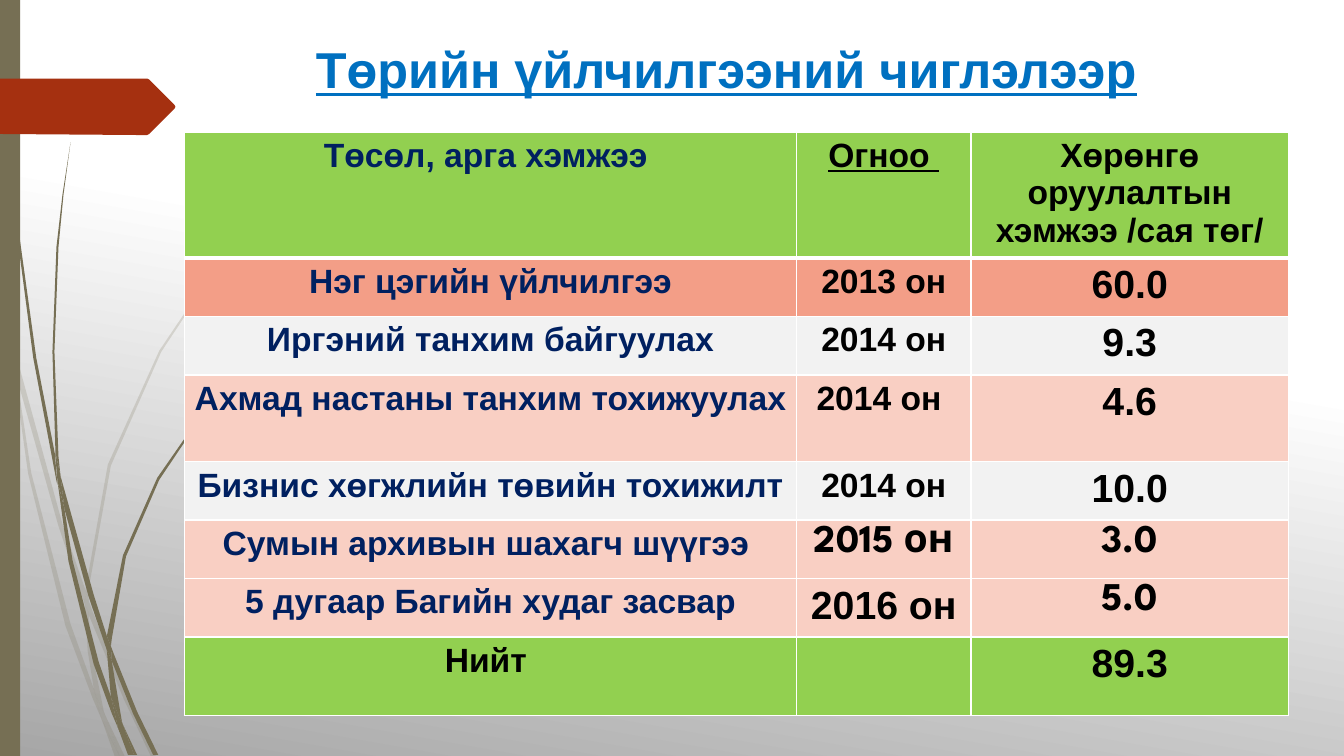
from lxml import etree
from pptx import Presentation, util as u
from pptx.dml.color import RGBColor
from pptx.enum import shapes, text
from pptx.oxml.ns import qn

HUES = {"olive": "766F54", "rust": "A53010", "title": "0070C0", "navy": "002060",
        "black": "000000", "white": "FFFFFF", "grey": "A6A6A6", "green": "92D050",
        "coral": "F39E87", "pale": "F2F2F2", "pink": "F9CFC3"}


def paint(fill, hue):
    fill.solid()
    fill.fore_color.rgb = RGBColor.from_string(HUES[hue])


def draw(parent, spots, hue):
    """Closed outline from (x, y) spots in hundredths of an inch."""
    pen = parent.build_freeform(*spots[0], scale=u.Inches(0.01))
    pen.add_line_segments(spots[1:], close=True)
    form = pen.convert_to_shape()
    form.shadow.inherit = False
    form.line.fill.background()
    paint(form.fill, hue)
    return form


deck = Presentation()
deck.slide_width, deck.slide_height = u.Inches(13.33), u.Inches(7.5)
slide = deck.slides.add_slide(deck.slide_layouts[5])

# Background: white fading to grey
back = slide.background.fill
back.gradient()
back.gradient_angle = 260
for stop, (spot, hue) in zip(back.gradient_stops, [(0.4, "white"), (1, "grey")]):
    stop.position = spot
    stop.color.rgb = RGBColor.from_string(HUES[hue])

# Grass blades, in hundredths of an inch
FAINT = [
    [(11, 350), (9, 322), (0, 282), (0, 299), (10, 344)],
    [(58, 522), (84, 599), (85, 586), (62, 520), (14, 345), (17, 376)],
    [(92, 607), (88, 596), (88, 610), (123, 694), (150, 751), (155, 751), (127, 692)],
    [(119, 751), (124, 751), (105, 711)],
    [(93, 683), (70, 619), (31, 469), (17, 376), (11, 350), (28, 470), (65, 621),
     (92, 693), (101, 714), (99, 707)],
    [(84, 599), (87, 646), (93, 683), (96, 692), (105, 711), (103, 706), (91, 646),
     (88, 610), (88, 608)],
    [(88, 584), (110, 462), (160, 349), (229, 245), (268, 198), (290, 175), (312, 154),
     (312, 153), (289, 175), (268, 197), (228, 244), (158, 348), (107, 461), (85, 584),
     (85, 586), (88, 596)],
    [(101, 714), (114, 751), (119, 751)],
    [(88, 608), (88, 610), (88, 596), (85, 586), (84, 599)],
    [(96, 692), (93, 683), (99, 707), (101, 714), (119, 751), (105, 711)],
]
SOLID = [
    [(7, 110), (17, 233), (33, 355), (56, 477), (57, 481), (55, 457), (55, 453),
     (36, 355), (19, 232), (8, 109), (5, 48), (4, 0), (3, 0), (4, 48)],
    [(88, 592), (106, 645), (106, 633), (106, 631), (93, 590), (60, 472), (64, 505)],
    [(113, 649), (110, 641), (111, 656), (132, 708), (152, 749), (157, 749), (136, 706)],
    [(110, 691), (98, 657), (72, 556), (64, 505), (57, 477), (68, 557), (93, 659),
     (111, 708), (117, 722), (116, 717)],
    [(60, 472), (58, 453), (54, 349), (58, 245), (63, 193), (70, 141), (62, 193),
     (56, 245), (52, 349), (55, 449)],
    [(133, 749), (136, 749), (122, 719)],
    [(57, 477), (64, 505), (60, 472), (55, 449), (55, 453)],
    [(111, 633), (125, 552), (158, 476), (205, 406), (231, 374), (245, 359), (261, 344),
     (260, 344), (245, 358), (231, 373), (204, 405), (156, 474), (122, 551), (106, 631),
     (110, 641)],
    [(117, 722), (127, 749), (131, 749)],
    [(106, 645), (110, 691), (116, 706), (122, 719), (121, 716), (111, 656), (109, 651)],
    [(106, 645), (109, 651), (111, 656), (110, 641), (106, 631), (106, 633)],
    [(116, 706), (110, 691), (116, 717), (117, 722), (130, 749), (133, 749), (122, 719)],
]
for tuft, alpha in [(FAINT, 20), (SOLID, 100)]:
    group = slide.shapes.add_group_shape()
    for spots in tuft:
        blade = draw(group.shapes, spots, "olive")
        if alpha < 100:
            tint = blade.fill._xPr.find(".//" + qn("a:srgbClr"))
            etree.SubElement(tint, qn("a:alpha"), val=str(alpha * 1000))

# Side bar and arrow tag
bar = slide.shapes.add_shape(shapes.MSO_SHAPE.RECTANGLE, 0, 0, u.Inches(0.2), u.Inches(7.5))
bar.shadow.inherit = False
bar.line.fill.background()
paint(bar.fill, "olive")
draw(slide.shapes, [(0, 78), (146, 78), (148, 79), (173, 104), (174, 106), (173, 108),
                    (148, 133), (146, 134), (136, 134), (0, 133)], "rust")

# Title
title = slide.shapes.title
title.left, title.top = u.Inches(1.83), u.Inches(0.25)
title.width, title.height = u.Inches(10.75), u.Inches(0.86)
frame = title.text_frame
frame.text = "Төрийн үйлчилгээний чиглэлээр"
frame.vertical_anchor = text.MSO_ANCHOR.MIDDLE
line = frame.paragraphs[0]
line.alignment = text.PP_ALIGN.CENTER
line.font.name, line.font.size = "Arial", u.Pt(36)
line.font.bold = line.font.underline = True
line.font.color.rgb = RGBColor.from_string(HUES["title"])

# Table: fill, height, then the three cells
ROWS = [
    ("green", 1.25, "Төсөл, арга хэмжээ ", "Огноо ", "Хөрөнгө оруулалтын хэмжээ /сая төг/"),
    ("coral", 0.58, "Нэг цэгийн үйлчилгээ", "2013 он", "60.0"),
    ("pale", 0.58, "Иргэний танхим байгуулах", "2014 он", "9.3"),
    ("pink", 0.86, "Ахмад настаны танхим тохижуулах", "2014 он ", "4.6"),
    ("pale", 0.58, "Бизнис хөгжлийн төвийн тохижилт", "2014 он", "10.0"),
    ("pink", 0.58, "Сумын архивын шахагч шүүгээ ", "2015 он", "3.0"),
    ("pink", 0.58, "5 дугаар Багийн худаг засвар", "2016 он", "5.0"),
    ("green", 0.78, "Нийт ", "", "89.3"),
]
LARGE = {(5, 1), (6, 1)}
SPARTAN = {(5, 1), (5, 2), (6, 2)}
grid = slide.shapes.add_table(len(ROWS), 3, u.Inches(1.83), u.Inches(1.31),
                              u.Inches(10.95), u.Inches(5.79)).table
for col, width in zip(grid.columns, [6.07, 1.73, 3.15]):
    col.width = u.Inches(width)
for r, (hue, height, *words) in enumerate(ROWS):
    grid.rows[r].height = u.Inches(height)
    for c, word in enumerate(words):
        cell = grid.cell(r, c)
        props = cell._tc.get_or_add_tcPr()
        for side in "LRTB":
            thick = (r, side) in [(0, "B"), (1, "T")]
            edge = etree.SubElement(props, qn("a:ln" + side), w=str(u.Pt(3 if thick else 1)))
            solid = etree.SubElement(edge, qn("a:solidFill"))
            etree.SubElement(solid, qn("a:srgbClr"), val=HUES["white"])
        paint(cell.fill, hue)
        cell.text = word
        line = cell.text_frame.paragraphs[0]
        line.alignment = text.PP_ALIGN.CENTER
        font = line.font
        font.name = "League Spartan" if (r, c) in SPARTAN else "Arial"
        font.size = u.Pt(28 if (r, c) in LARGE or (r > 0 and c == 2) else 24)
        font.bold = True
        font.underline = (r, c) == (0, 1)
        shade = "navy" if c == 0 and r < len(ROWS) - 1 else "black"
        font.color.rgb = RGBColor.from_string(HUES[shade])

deck.save("out.pptx")
